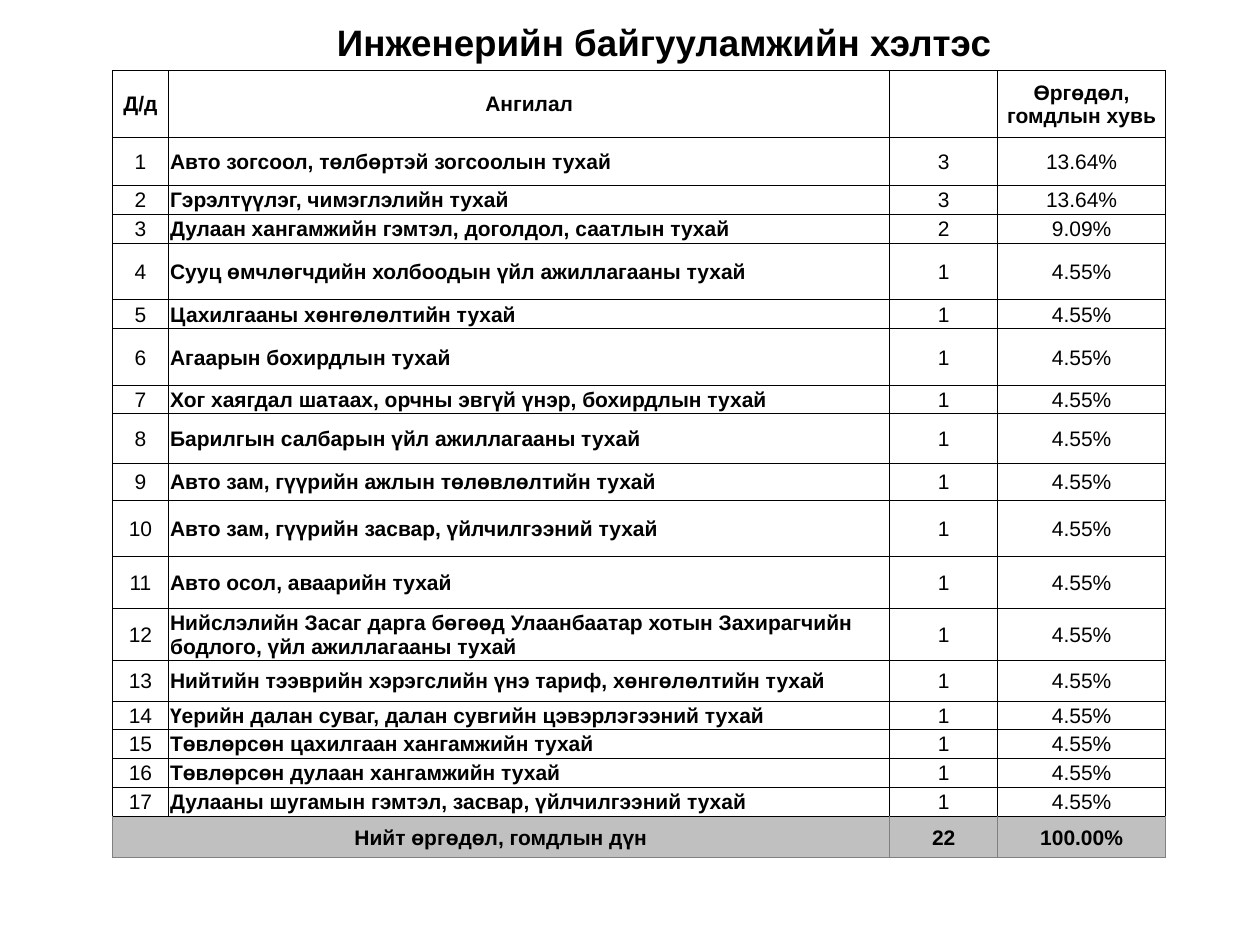
from lxml import etree
from pptx import Presentation
from pptx.dml.color import RGBColor
from pptx.enum.text import MSO_ANCHOR, PP_ALIGN
from pptx.oxml.ns import qn
from pptx.util import Inches, Pt

CENTER = PP_ALIGN.CENTER
LEFT = PP_ALIGN.LEFT
MIDDLE = MSO_ANCHOR.MIDDLE
COLORS = {"text": "000000", "body": "FFFFFF", "total": "C0C0C0",
          "border": "000000", "total_border": "808080"}
FONT = "Arial"

topics = [
    ("Авто зогсоол, төлбөртэй зогсоолын тухай", 3),
    ("Гэрэлтүүлэг, чимэглэлийн тухай", 3),
    ("Дулаан хангамжийн гэмтэл, доголдол, саатлын тухай", 2),
    ("Сууц өмчлөгчдийн холбоодын үйл ажиллагааны тухай", 1),
    ("Цахилгааны хөнгөлөлтийн тухай", 1),
    ("Агаарын бохирдлын тухай", 1),
    ("Хог хаягдал шатаах, орчны эвгүй үнэр, бохирдлын тухай", 1),
    ("Барилгын салбарын үйл ажиллагааны тухай", 1),
    ("Авто зам, гүүрийн ажлын төлөвлөлтийн тухай", 1),
    ("Авто зам, гүүрийн засвар, үйлчилгээний тухай", 1),
    ("Авто осол, аваарийн тухай", 1),
    ("Нийслэлийн Засаг дарга бөгөөд Улаанбаатар хотын Захирагчийн бодлого, үйл ажиллагааны тухай", 1),
    ("Нийтийн тээврийн хэрэгслийн үнэ тариф, хөнгөлөлтийн тухай", 1),
    ("Үерийн далан суваг, далан сувгийн цэвэрлэгээний тухай", 1),
    ("Төвлөрсөн цахилгаан хангамжийн тухай", 1),
    ("Төвлөрсөн дулаан хангамжийн тухай", 1),
    ("Дулааны шугамын гэмтэл, засвар, үйлчилгээний тухай", 1),
]
total = sum(count for topic, count in topics)
rows = [("Д/д", "Ангилал", "", "Өргөдөл, гомдлын хувь")]
for number, (topic, count) in enumerate(topics, start=1):
    rows.append((str(number), topic, str(count), f"{count / total:.2%}"))
rows.append(("Нийт өргөдөл, гомдлын дүн", "", str(total), f"{1:.2%}"))

column_widths = [0.45, 5.72, 0.86, 1.33]
row_heights = [0.53, 0.38, 0.23, 0.23, 0.45, 0.23, 0.45, 0.22, 0.4, 0.29,
               0.45, 0.41, 0.41, 0.33, 0.22, 0.23, 0.23, 0.23, 0.33]


def add_text(paragraph, text, size, bold, alignment):
    paragraph.alignment = alignment
    run = paragraph.add_run()
    run.text = text
    run.font.name = FONT
    run.font.size = Pt(size)
    run.font.bold = bold
    run.font.color.rgb = RGBColor.from_string(COLORS["text"])


def add_border(cell, side, color):
    line = etree.SubElement(cell._tc.get_or_add_tcPr(), qn(f"a:ln{side}"), w=str(Pt(0.5)))
    fill = etree.SubElement(line, qn("a:solidFill"))
    etree.SubElement(fill, qn("a:srgbClr"), val=color)


presentation = Presentation()
presentation.slide_width = Inches(10)
presentation.slide_height = Inches(7.5)
slide = presentation.slides.add_slide(presentation.slide_layouts[6])

title = slide.shapes.add_textbox(Inches(0.89), Inches(0.14), Inches(8.36), Inches(0.42))
title_frame = title.text_frame
title_frame.word_wrap = True
title_frame.vertical_anchor = MIDDLE
title_frame.margin_left = Inches(0.5)
title_frame.paragraphs[0].line_spacing = 0.9
add_text(title_frame.paragraphs[0], "Инженерийн байгууламжийн хэлтэс", 21, True, CENTER)

table = slide.shapes.add_table(len(rows), len(column_widths), Inches(0.89), Inches(0.56),
                               Inches(sum(column_widths)), Inches(sum(row_heights))).table
table.first_row = False
table.horz_banding = False
for column, width in zip(table.columns, column_widths):
    column.width = Inches(width)
for row, height in zip(table.rows, row_heights):
    row.height = Inches(height)

last_row = len(rows) - 1
table.cell(last_row, 0).merge(table.cell(last_row, 1))

for row_index, values in enumerate(rows):
    is_total = row_index == last_row
    is_topic_row = 0 < row_index < last_row
    for column_index, value in enumerate(values):
        cell = table.cell(row_index, column_index)
        cell.vertical_anchor = MIDDLE
        cell.margin_left = cell.margin_right = cell.margin_top = Inches(0.01)
        cell.margin_bottom = 0
        for side in "LRTB":
            gray = is_total and side != "T"
            add_border(cell, side, COLORS["total_border" if gray else "border"])
        cell.fill.solid()
        cell.fill.fore_color.rgb = RGBColor.from_string(COLORS["total" if is_total else "body"])
        if value:
            is_topic = is_topic_row and column_index == 1
            add_text(cell.text_frame.paragraphs[0], value, 12,
                     is_topic or not is_topic_row, LEFT if is_topic else CENTER)

presentation.save("out.pptx")
